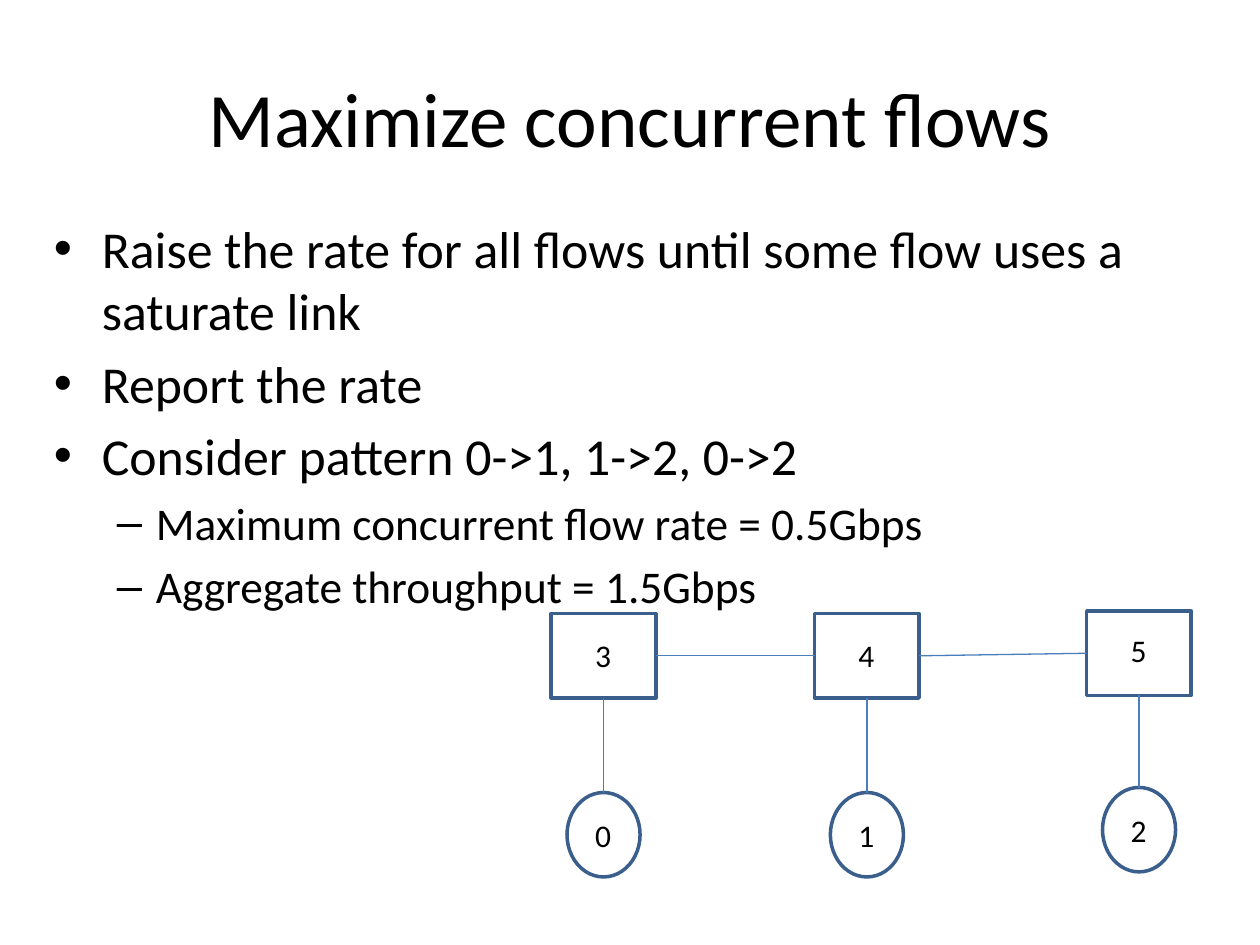
from lxml.etree import SubElement
from pptx import Presentation
from pptx.dml.color import RGBColor
from pptx.enum.shapes import MSO_CONNECTOR, MSO_SHAPE
from pptx.enum.text import MSO_ANCHOR, PP_ALIGN
from pptx.oxml.ns import qn
from pptx.util import Inches, Pt

TITLE = "Maximize concurrent flows"
POINTS = [
    (0, "Raise the rate for all flows until some flow uses a saturate link"),
    (0, "Report the rate"),
    (0, "Consider pattern 0->1, 1->2, 0->2"),
    (1, "Maximum concurrent flow rate = 0.5Gbps"),
    (1, "Aggregate throughput = 1.5Gbps"),
]
# level: bullet, left margin, hanging indent, size
LEVELS = [("•", 0.38, 0.38, 29.6), ("–", 0.81, 0.31, 25.9)]
# switch, host, centre x, switch top, host top
NODES = [
    ("3", "0", 4.79, 4.87, 6.29),
    ("4", "1", 6.88, 4.87, 6.29),
    ("5", "2", 9.04, 4.85, 6.25),
]
BOX_W, OVAL_W, NODE_H = 0.83, 0.58, 0.67
LABEL_W, LABEL_H, LABEL_DY, ROW_GAP = 0.33, 0.4, 0.14, 1.43
INK, EDGE, LINK = "000000", "3A5F8C", "4B7EBC"

deck = Presentation()
deck.slide_width, deck.slide_height = Inches(10), Inches(7.5)
slide = deck.slides.add_slide(deck.slide_layouts[6])
shapes = slide.shapes


def color(code):
    return RGBColor.from_string(code)


def set_bullet(par, mark, left, hang):
    props = par._p.get_or_add_pPr()
    props.set("marL", str(Inches(left)))
    props.set("indent", str(-Inches(hang)))
    SubElement(props, qn("a:buFont")).set("typeface", "Arial")
    SubElement(props, qn("a:buChar")).set("char", mark)


def add_text(text, x, y, w, h, size=18, wrap=True, align=PP_ALIGN.LEFT,
             anchor=MSO_ANCHOR.TOP):
    """Add a text box; text is a string or a list of (level, text)."""
    frame = shapes.add_textbox(*map(Inches, (x, y, w, h))).text_frame
    frame.word_wrap, frame.vertical_anchor = wrap, anchor
    items = [(None, text)] if isinstance(text, str) else text
    for i, (level, words) in enumerate(items):
        par = frame.paragraphs[0] if i == 0 else frame.add_paragraph()
        par.alignment = align
        pts = size
        if level is not None:
            mark, left, hang, pts = LEVELS[level]
            par.level = level
            if i:
                par.space_before = Pt(round(pts * 0.2, 1))
            set_bullet(par, mark, left, hang)
        run = par.add_run()
        run.text = words
        run.font.name, run.font.size = "Calibri", Pt(pts)
        run.font.color.rgb = color(INK)


def add_node(kind, mid, y, w):
    node = shapes.add_shape(kind, *map(Inches, (mid - w / 2, y, w, NODE_H)))
    node.shadow.inherit = False
    node.fill.background()
    node.line.color.rgb, node.line.width = color(EDGE), Pt(2)
    return node


def add_link(start, site, end, goal):
    link = shapes.add_connector(MSO_CONNECTOR.STRAIGHT, 0, 0, 0, 0)
    link.begin_connect(start, site)
    link.end_connect(end, goal)
    link.line.color.rgb, link.line.width = color(LINK), Pt(0.75)
    SubElement(link._element.spPr, qn("a:effectLst"))


add_text(TITLE, 0.5, 0.3, 9, 1.25, size=44, align=PP_ALIGN.CENTER,
         anchor=MSO_ANCHOR.MIDDLE)
add_text(POINTS, 0.33, 1.67, 9, 3)

boxes = []
for switch, host, mid, top, low in NODES:
    box = add_node(MSO_SHAPE.RECTANGLE, mid, top, BOX_W)
    oval = add_node(MSO_SHAPE.OVAL, mid, low, OVAL_W)
    label_y = low + LABEL_DY
    for name, y in ((host, label_y), (switch, label_y - ROW_GAP)):
        add_text(name, mid - LABEL_W / 2, y, LABEL_W, LABEL_H, wrap=False)
    add_link(oval, 0, box, 2)
    boxes.append(box)
for near, far in zip(boxes, boxes[1:]):
    add_link(near, 3, far, 1)

deck.save("out.pptx")
